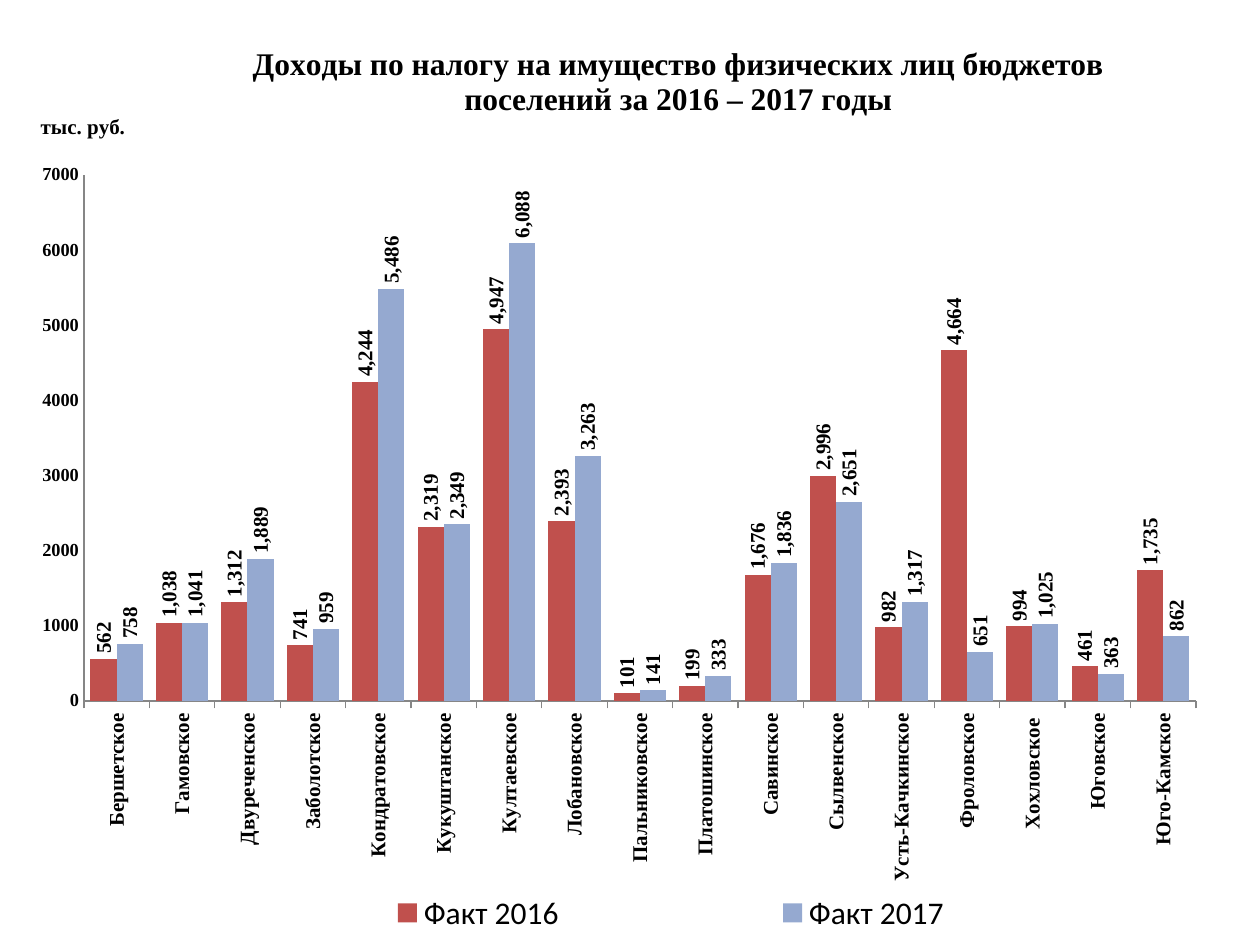
from typing import NamedTuple

from lxml import etree
from pptx import Presentation
from pptx.chart.data import CategoryChartData
from pptx.dml.color import RGBColor
from pptx.enum.chart import (
    XL_CHART_TYPE, XL_LABEL_POSITION, XL_LEGEND_POSITION, XL_TICK_LABEL_POSITION, XL_TICK_MARK,
)
from pptx.oxml.ns import qn
from pptx.util import Pt

CLUSTERED = XL_CHART_TYPE.COLUMN_CLUSTERED
OUTSIDE_END = XL_LABEL_POSITION.OUTSIDE_END
LEGEND_BOTTOM = XL_LEGEND_POSITION.BOTTOM
LABELS_LOW = XL_TICK_LABEL_POSITION.LOW
TICK_NONE = XL_TICK_MARK.NONE
TICK_OUTSIDE = XL_TICK_MARK.OUTSIDE
EMU_PER_PX = 914400 // 126
SERIF = "Times New Roman"
SANS = "Calibri"
BLACK = "000000"
AXIS_GRAY = "868686"
UPWARD = -5400000


class Box(NamedTuple):
    left: int
    top: int
    width: int = 0
    height: int = 0


class Year(NamedTuple):
    name: str
    color: str
    incomes: tuple[int, ...]


FRAME = Box(15, 4, 1191, 937)
PLOT = Box(69, 171, 1112, 526)
TITLE = Box(234, 38)
UNIT = Box(22, 106)
LEGEND = Box(169, 881, 974, 56)

SETTLEMENTS = (
    "Бершетское", "Гамовское", "Двуреченское", "Заболотское", "Кондратовское", "Кукуштанское",
    "Култаевское", "Лобановское", "Пальниковское", "Платошинское", "Савинское", "Сылвенское",
    "Усть-Качкинское", "Фроловское", "Хохловское ", "Юговское", "Юго-Камское",
)
YEARS = (
    Year("Факт 2016", "C0504D", (562, 1038, 1312, 741, 4244, 2319, 4947, 2393, 101, 199,
                                 1676, 2996, 982, 4664, 994, 461, 1735)),
    Year("Факт 2017", "95A9D0", (758, 1041, 1889, 959, 5486, 2349, 6088, 3263, 141, 333,
                                 1836, 2651, 1317, 651, 1025, 363, 862)),
)
TITLE_LINES = (
    "Доходы по налогу на имущество физических лиц бюджетов",
    "поселений за 2016 – 2017 годы",
)


def px(length: int) -> int:
    return length * EMU_PER_PX


def rgb(color: str) -> RGBColor:
    return RGBColor.from_string(color)


def set_font(font, size: float, name: str = SERIF, bold: bool = True) -> None:
    font.size = Pt(size)
    font.name = name
    font.bold = bold
    font.color.rgb = rgb(BLACK)


def rotate_text(element, angle: int) -> None:
    for body in element.iter(qn("a:bodyPr")):
        body.set("rot", str(angle))
        body.set("vert", "horz")


def place(element, box: Box, inner: bool = False) -> None:
    for previous in element.findall(qn("c:layout")):
        element.remove(previous)
    layout = etree.Element(qn("c:layout"))
    manual = etree.SubElement(layout, qn("c:manualLayout"))
    settings = [("layoutTarget", "inner")] if inner else []
    settings += [("xMode", "edge"), ("yMode", "edge")]
    settings += [("x", box.left / FRAME.width), ("y", box.top / FRAME.height)]
    if box.width:
        settings += [("w", box.width / FRAME.width), ("h", box.height / FRAME.height)]
    for tag, setting in settings:
        etree.SubElement(manual, qn(f"c:{tag}")).set("val", str(setting))
    overlay = element.find(qn("c:overlay"))
    if overlay is None:
        element.insert(0, layout)
    else:
        overlay.addprevious(layout)


def write_title(title, lines: tuple[str, ...], size: float, box: Box) -> None:
    frame = title.text_frame
    for index, line in enumerate(lines):
        paragraph = frame.add_paragraph() if index else frame.paragraphs[0]
        run = paragraph.add_run()
        run.text = line
        set_font(run.font, size)
    rotate_text(title._element, 0)
    place(title._element, box)


def format_axis(axis, size: float, tick) -> None:
    axis.has_major_gridlines = False
    axis.major_tick_mark = tick
    axis.minor_tick_mark = TICK_NONE
    axis.format.line.color.rgb = rgb(AXIS_GRAY)
    axis.format.line.width = Pt(0.75)
    set_font(axis.tick_labels.font, size)


def format_series(series, year: Year) -> None:
    series.format.fill.solid()
    series.format.fill.fore_color.rgb = rgb(year.color)
    series.invert_if_negative = False
    labels = series.data_labels
    labels.show_value = True
    labels.position = OUTSIDE_END
    labels.number_format = "#,##0"
    labels.number_format_is_linked = False
    set_font(labels.font, 12)
    rotate_text(labels._element, UPWARD)


def add_income_chart(slide) -> None:
    incomes = CategoryChartData()
    incomes.categories = SETTLEMENTS
    for year in YEARS:
        incomes.add_series(year.name, year.incomes)
    chart = slide.shapes.add_chart(CLUSTERED, *map(px, FRAME), incomes).chart
    set_font(chart.font, 10, SANS, False)

    chart.has_title = True
    write_title(chart.chart_title, TITLE_LINES, 18, TITLE)

    plot = chart.plots[0]
    plot.gap_width = 50
    plot.overlap = 0
    plot.vary_by_categories = False
    for series, year in zip(plot.series, YEARS):
        format_series(series, year)

    settlements = chart.category_axis
    format_axis(settlements, 12, TICK_OUTSIDE)
    settlements.tick_label_position = LABELS_LOW
    rotate_text(settlements._element, UPWARD)

    amounts = chart.value_axis
    format_axis(amounts, 10.5, TICK_NONE)
    amounts.minimum_scale = 0
    amounts.maximum_scale = 7000
    amounts.major_unit = 1000
    amounts.tick_labels.number_format = "0"
    amounts.tick_labels.number_format_is_linked = False
    amounts.has_title = True
    write_title(amounts.axis_title, ("тыс. руб.",), 12, UNIT)

    chart.has_legend = True
    chart.legend.position = LEGEND_BOTTOM
    chart.legend.include_in_layout = False
    set_font(chart.legend.font, 18, SANS, False)
    place(chart.legend._element, LEGEND)
    place(chart._chartSpace.find(".//" + qn("c:plotArea")), PLOT, inner=True)


def main() -> None:
    deck = Presentation()
    deck.slide_width = px(1260)
    deck.slide_height = px(945)
    slide = deck.slides.add_slide(deck.slide_layouts[6])
    add_income_chart(slide)
    deck.save("out.pptx")


if __name__ == "__main__":
    main()
